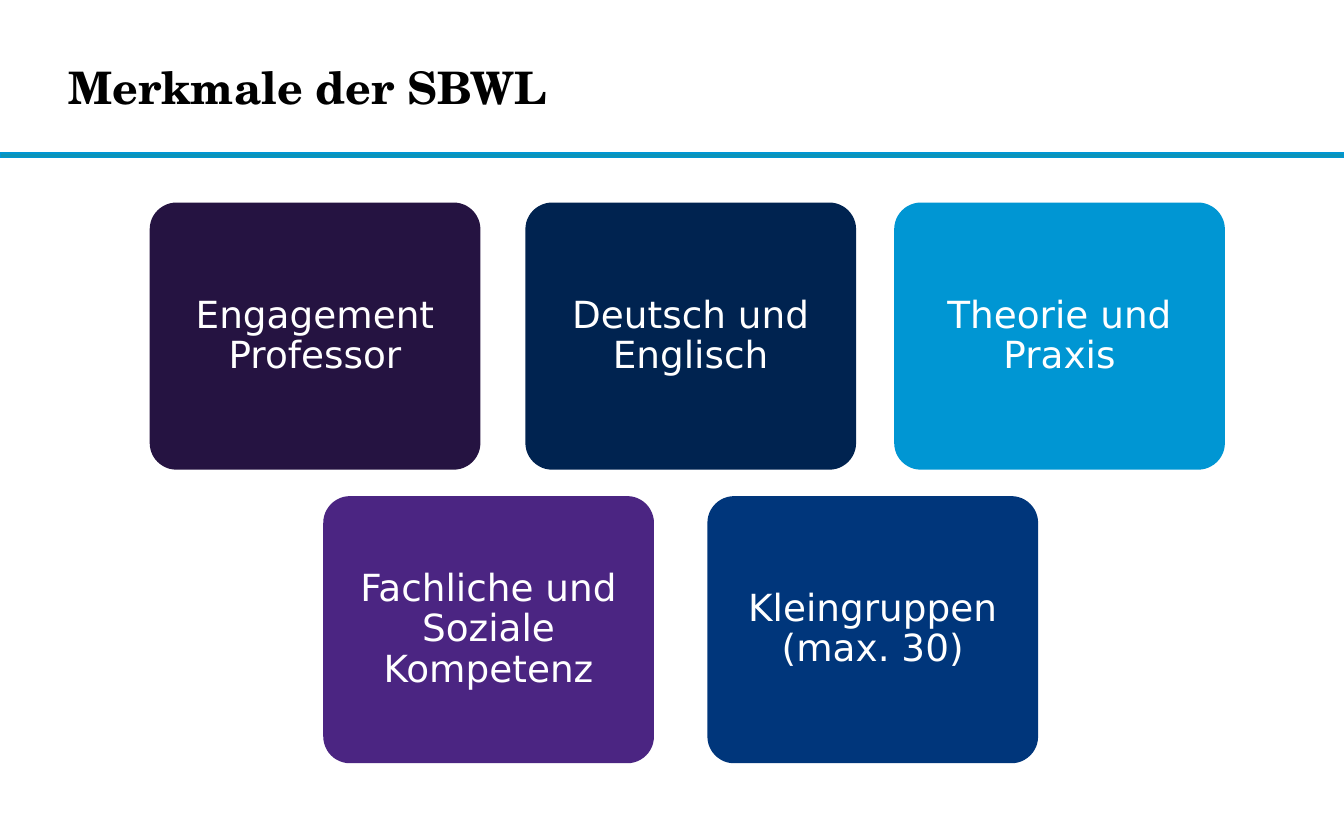
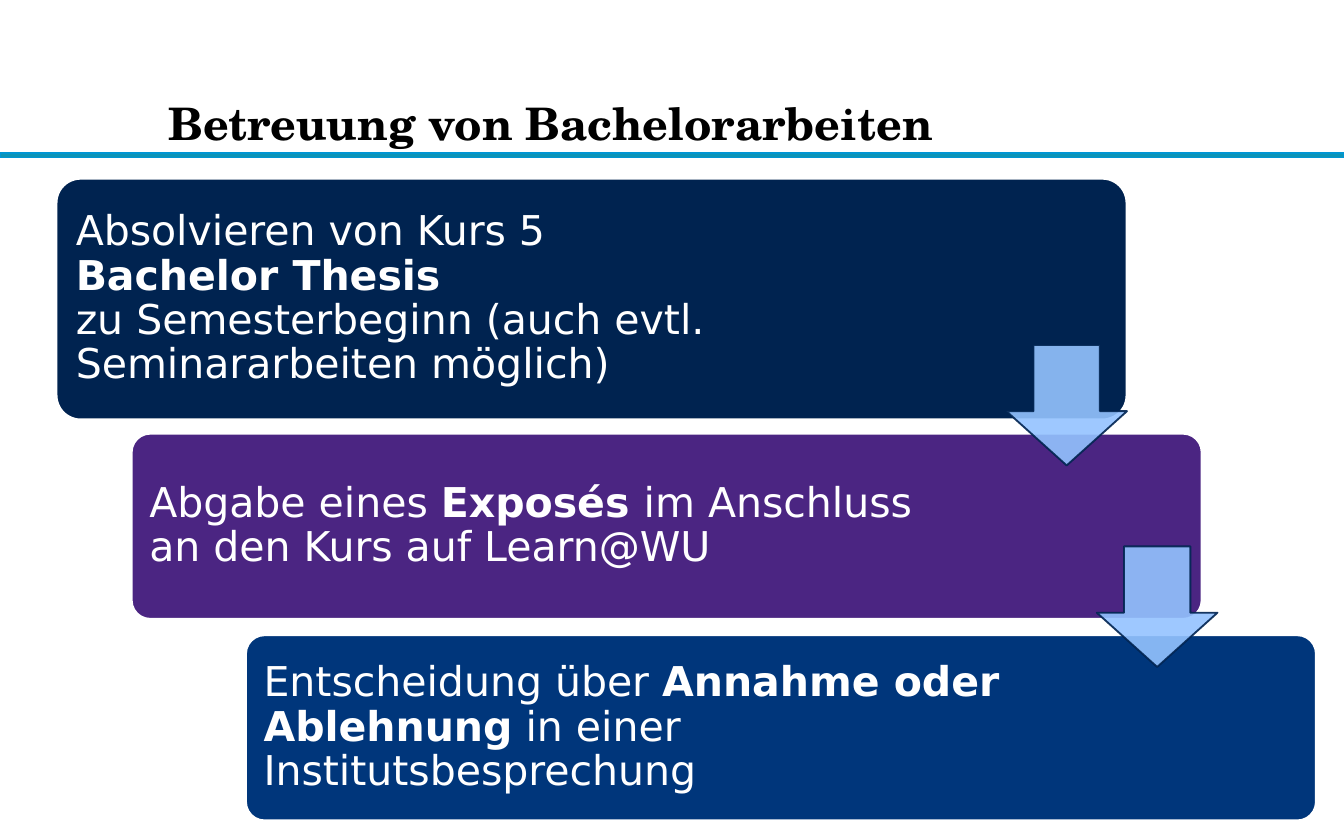
import dataclasses

import lxml.etree
import pptx
import pptx.dml.color
import pptx.enum.shapes
import pptx.enum.text
import pptx.oxml.ns
import pptx.util

Cm = pptx.util.Cm
Pt = pptx.util.Pt
Preset = pptx.enum.shapes.MSO_SHAPE


@dataclasses.dataclass(frozen=True)
class Theme:
    black: str = "000000"
    white: str = "FFFFFF"
    band: str = "0C94B7"
    sky: str = "0096D3"
    plum: str = "251341"
    navy: str = "002350"
    purple: str = "4B2582"
    blue: str = "00367B"
    arrow: str = "94C3FF"
    title_font: str = "TeX Gyre Schola"
    body_font: str = "DejaVu Sans"
    title_size: int = 24
    feature_size: int = 20
    step_size: int = 22
    line_spacing: float = 0.9
    arrow_opacity: int = 90


@dataclasses.dataclass(frozen=True)
class Box:
    left: float
    top: float
    width: float
    height: float

    def inner(self, dx, dy, width, height):
        return Box(self.left + dx, self.top + dy, width, height)

    def lengths(self):
        return [Cm(v) for v in (self.left, self.top, self.width, self.height)]


THEME = Theme()
PAGE = Box(0, 0, 25.4, 15.88)

FEATURES = [
    (0, 0, THEME.plum, "Engagement Professor"),
    (7.1, 0, THEME.navy, "Deutsch und Englisch"),
    (14.07, 0, THEME.sky, "Theorie und Praxis"),
    (3.28, 5.55, THEME.purple, "Fachliche und Soziale Kompetenz"),
    (10.54, 5.55, THEME.blue, "Kleingruppen (max. 30)"),
]

STEPS = [
    (0, 0, 4.55, THEME.navy, [
        ("Absolvieren von Kurs 5\n", False),
        ("Bachelor Thesis\n", True),
        ("zu Semesterbeginn (auch evtl. Seminararbeiten möglich)", False),
    ]),
    (1.42, 4.82, 3.5, THEME.purple, [
        ("Abgabe eines ", False),
        ("Exposés ", True),
        ("im Anschluss an den Kurs auf Learn@WU", False),
    ]),
    (3.58, 8.63, 3.5, THEME.blue, [
        ("Entscheidung über ", False),
        ("Annahme oder Ablehnung", True),
        (" in einer Institutsbesprechung", False),
    ]),
]
ARROW_LEFTS = [17.95, 19.66]


def rgb(code):
    return pptx.dml.color.RGBColor.from_string(code)


def add_runs(paragraph, runs, font, size, color):
    for text, bold in runs:
        run = paragraph.add_run()
        run.text = text.rstrip("\n")
        run.font.name = font
        run.font.size = Pt(size)
        run.font.bold = bold
        run.font.color.rgb = rgb(color)
        if text.endswith("\n"):
            paragraph.add_line_break()


def set_margins(frame, left, top, right, bottom):
    frame.margin_left, frame.margin_top = Cm(left), Cm(top)
    frame.margin_right, frame.margin_bottom = Cm(right), Cm(bottom)


def add_block(slide, preset, box, fill, line=None, adjustments=()):
    block = slide.shapes.add_shape(preset, *box.lengths())
    block.shadow.inherit = False
    block.fill.solid()
    block.fill.fore_color.rgb = rgb(fill)
    if line:
        block.line.color.rgb = rgb(line)
        block.line.width = Pt(1)
    else:
        block.line.fill.background()
    for index, value in enumerate(adjustments):
        block.adjustments[index] = value
    return block


def add_card(slide, box, fill, line, runs, size, align, inset, right_inset):
    card = add_block(slide, Preset.ROUNDED_RECTANGLE, box, fill, line, [0.1])
    frame = card.text_frame
    frame.word_wrap = True
    frame.vertical_anchor = pptx.enum.text.MSO_ANCHOR.MIDDLE
    set_margins(frame, inset, inset, right_inset, inset)
    paragraph = frame.paragraphs[0]
    paragraph.alignment = align
    paragraph.line_spacing = THEME.line_spacing
    add_runs(paragraph, runs, THEME.body_font, size, THEME.white)


def set_opacity(shape, percent):
    for color in shape.element.spPr.iter(pptx.oxml.ns.qn("a:srgbClr")):
        alpha = lxml.etree.SubElement(color, pptx.oxml.ns.qn("a:alpha"))
        alpha.set("val", str(percent * 1000))


def add_master_band(deck, slide, box):
    band = add_block(slide, Preset.RECTANGLE, box, THEME.band, THEME.sky)
    band.element.nvSpPr.cNvPr.set("id", "90")
    deck.slide_master.shapes.element.append(band.element)


def add_title(slide, box, text):
    title = slide.shapes.title
    title.left, title.top, title.width, title.height = box.lengths()
    frame = title.text_frame
    frame.word_wrap = True
    frame.auto_size = pptx.enum.text.MSO_AUTO_SIZE.NONE
    frame.vertical_anchor = pptx.enum.text.MSO_ANCHOR.MIDDLE
    set_margins(frame, 0, 0, 0, 0)
    paragraph = frame.paragraphs[0]
    paragraph.alignment = pptx.enum.text.PP_ALIGN.LEFT
    add_runs(paragraph, [(text, True)], THEME.title_font, THEME.title_size, THEME.black)


def add_features(slide, region):
    for dx, dy, fill, label in FEATURES:
        add_card(slide, region.inner(dx, dy, 6.25, 5.05), fill, None, [(label, False)],
                 THEME.feature_size, pptx.enum.text.PP_ALIGN.CENTER, 0.2, 0.2)


def add_steps(slide, region):
    for dx, dy, height, fill, runs in STEPS:
        add_card(slide, region.inner(dx, dy, 20.22, height), fill, THEME.white, runs,
                 THEME.step_size, pptx.enum.text.PP_ALIGN.LEFT, 0.23, 4.2)
    for dx, (_, next_top, *_) in zip(ARROW_LEFTS, STEPS[1:]):
        arrow = add_block(slide, Preset.DOWN_ARROW,
                          region.inner(dx, next_top - 1.68, 2.28, 2.28),
                          THEME.arrow, THEME.navy, [0.55, 0.45])
        set_opacity(arrow, THEME.arrow_opacity)


def main():
    deck = pptx.Presentation()
    deck.slide_width, deck.slide_height = Cm(PAGE.width), Cm(PAGE.height)
    title_only = deck.slide_layouts[5]

    features = deck.slides.add_slide(title_only)
    add_master_band(deck, features, PAGE.inner(0, 2.9, PAGE.width, 0.08))
    add_title(features, PAGE.inner(1.3, 0.38, 19, 2.51), "Merkmale der SBWL")
    add_features(features, PAGE.inner(2.83, 3.83, 20.32, 10.6))

    thesis = deck.slides.add_slide(title_only)
    add_title(thesis, PAGE.inner(3.18, 0.99, 15.34, 2.64), "Betreuung von Bachelorarbeiten")
    add_steps(thesis, PAGE.inner(1.07, 3.38, 23.8, 12.13))

    deck.save("out.pptx")


if __name__ == "__main__":
    main()
